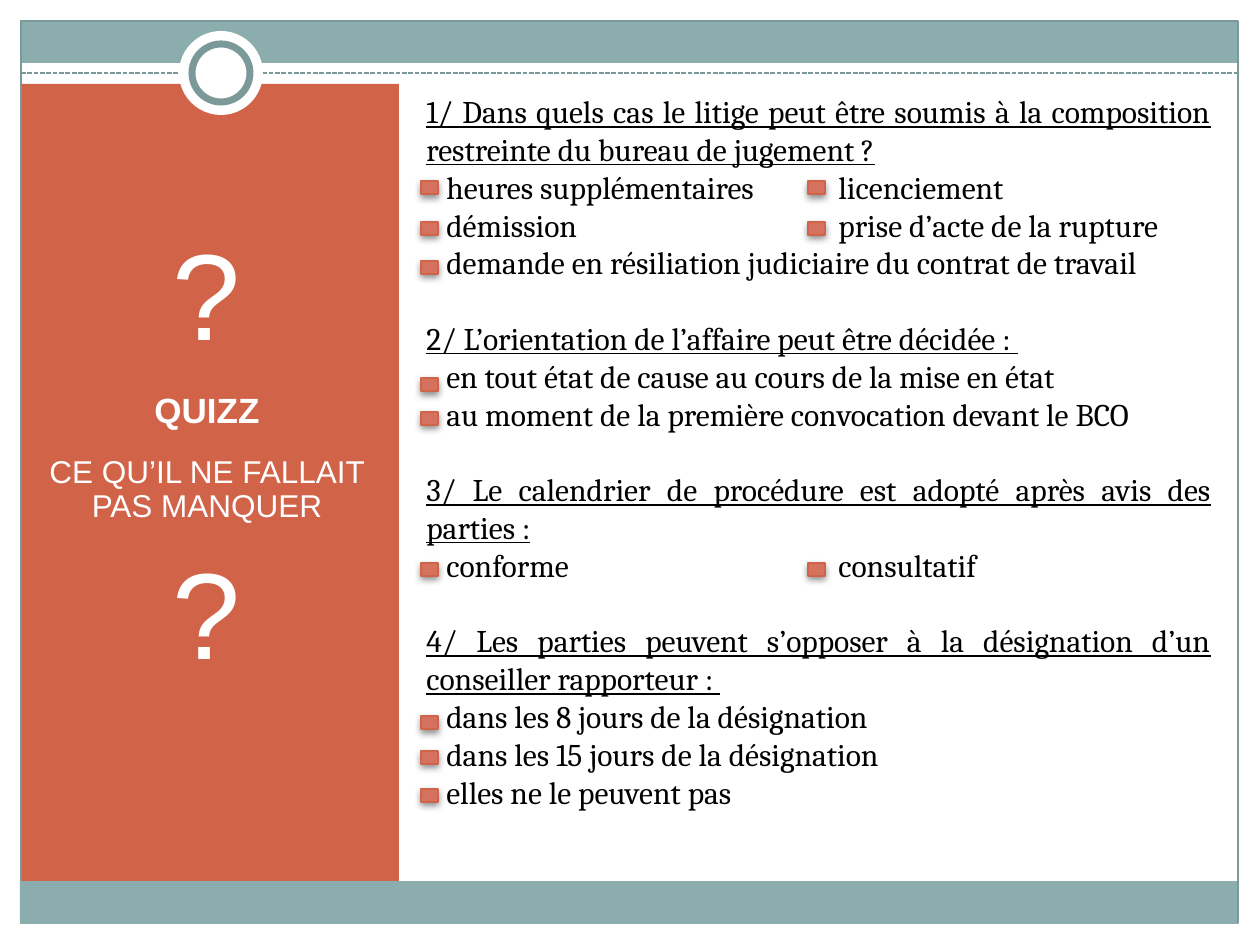
"""Build a quiz slide with a coloured side panel and four questions."""
from dataclasses import dataclass

from lxml import etree
from pptx import Presentation
from pptx import util as u
from pptx.dml.color import RGBColor
from pptx.enum import dml, shapes, text
from pptx.oxml import ns

SCALE = 914400 / 126
RECT = shapes.MSO_SHAPE.RECTANGLE
OVAL = shapes.MSO_SHAPE.OVAL
ALIGN = text.PP_ALIGN
FIT = text.MSO_AUTO_SIZE.SHAPE_TO_FIT_TEXT


@dataclass(frozen=True)
class Theme:
    white: str = "FFFFFF"
    black: str = "000000"
    teal: str = "8CADAE"
    edge: str = "7C999A"
    rust: str = "D16349"
    mark: str = "D4725F"
    sans: str = "Arial"
    serif: str = "Cambria"
    body: int = 18
    head: int = 20
    huge: int = 70
    row: float = 21.6


def px(num):
    return u.Emu(round(num * SCALE))


def rgb(code):
    return RGBColor.from_string(code)


def put(item, form):
    for key, val in form.items():
        setattr(item, key, val)


def node(root, tag, **attrs):
    return etree.SubElement(root, ns.qn(tag), {k: str(v) for k, v in attrs.items()})


class Page:
    def __init__(self, slide, theme):
        self.slide, self.theme = slide, theme

    def shape(self, kind, box, fill=None, line=None, width=0.75):
        item = self.slide.shapes.add_shape(kind, *map(px, box))
        item.shadow.inherit = False
        if fill:
            item.fill.solid()
            item.fill.fore_color.rgb = rgb(fill)
        else:
            item.fill.background()
        if line:
            item.line.color.rgb = rgb(line)
            item.line.width = u.Pt(width)
        else:
            item.line.fill.background()
        return item

    def rule(self, left, right, top):
        item = self.slide.shapes.add_connector(
            shapes.MSO_CONNECTOR.STRAIGHT, *map(px, (left, top, right, top)))
        item.line.color.rgb = rgb(self.theme.edge)
        put(item.line, {"width": u.Pt(0.9), "dash_style": dml.MSO_LINE.SQUARE_DOT})
        node(item._element.spPr, "a:effectLst")

    def mark(self, left, top):
        item = self.shape(RECT, (left, top, 17, 13), self.theme.mark, self.theme.rust)
        glow = node(item._element.spPr.find(ns.qn("a:effectLst")), "a:outerShdw",
                    blurRad=u.Pt(4), dist=u.Pt(2), dir=5400000, rotWithShape=0)
        node(node(glow, "a:srgbClr", val=self.theme.black), "a:alpha", val=45000)

    def frame(self, box, **form):
        item = self.slide.shapes.add_textbox(*map(px, box))
        put(item.text_frame, {"word_wrap": True, **form})
        return item.text_frame

    def para(self, frame, words, font, color, **form):
        first = frame.paragraphs[0]
        para = frame.add_paragraph() if first.runs else first
        put(para, form)
        run = para.add_run()
        run.text = words
        put(run.font, font)
        run.font.color.rgb = rgb(color)
        return para

    def option(self, frame, words, font, indent=0):
        para = self.para(frame, words, font, self.theme.black, alignment=ALIGN.LEFT)
        para._p.get_or_add_pPr().set("indent", str(px(indent)))


QUIZ = [
    ("1/ Dans quels cas le litige peut être soumis à la composition "
     "restreinte du bureau de jugement ?",
     [(181, "heures supplémentaires"),
      (222, "démission"),
      (261, "demande en résiliation judiciaire du contrat de travail")]),
    ("2/ L’orientation de l’affaire peut être décidée : ",
     [(378, "en tout état de cause au cours de la mise en état"),
      (412, "au moment de la première convocation devant le BCO")]),
    ("3/ Le calendrier de procédure est adopté après avis des parties :",
     [(563, "conforme")]),
    ("4/ Les parties peuvent s’opposer à la désignation d’un "
     "conseiller rapporteur : ",
     [(716, "dans les 8 jours de la désignation"),
      (751, "dans les 15 jours de la désignation"),
      (789, "elles ne le peuvent pas")]),
]

SIDE = [
    (162, [(181, "licenciement"), (222, "prise d’acte de la rupture")]),
    (540, [(563, "consultatif")]),
]


def decor(page):
    th = page.theme
    page.rule(21, 1239, 73)
    for box, fill, line, width in [
        ((1239, 0, 21, 945), th.white, None, 0),
        ((0, 0, 1260, 21), th.white, None, 0),
        ((0, 0, 21, 945), th.white, None, 0),
        ((21, 21, 1217, 42), th.teal, None, 0),
        ((21, 84, 378, 809), th.rust, None, 0),
        ((21, 21, 1217, 902), None, th.edge, 0.75),
    ]:
        page.shape(RECT, box, fill, line, width)
    page.shape(OVAL, (179, 31, 84, 84), th.white)
    page.shape(OVAL, (192, 44, 58, 58), th.white, th.edge, 4)
    page.shape(RECT, (20, 881, 1217, 43), th.teal)


def panel(page):
    th = page.theme
    frame = page.frame((26, 222, 362, 500), margin_top=px(13),
                       vertical_anchor=text.MSO_ANCHOR.TOP)
    for words, size, bold, lead in [
        ("?", th.huge, False, 0),
        ("QUIZZ", th.head, True, 5),
        ("CE QU’IL NE FALLAIT PAS MANQUER", th.body, False, 4),
        ("?", th.huge, False, 7),
    ]:
        font = {"name": th.sans, "size": u.Pt(size), "bold": bold}
        page.para(frame, words, font, th.white, alignment=ALIGN.CENTER,
                  line_spacing=0.9, space_before=u.Pt(lead), space_after=u.Pt(10))


def quiz(page):
    th = page.theme
    frame = page.frame((414, 86, 809, 738), auto_size=FIT)
    font = {"name": th.serif, "size": u.Pt(th.body)}
    for num, (ask, picks) in enumerate(QUIZ):
        page.para(frame, ask, {**font, "underline": True}, th.black,
                  alignment=ALIGN.JUSTIFY, space_before=u.Pt(th.row if num else 0))
        for top, words in picks:
            page.option(frame, words, font, 20)
            page.mark(421, top)
    for head, picks in SIDE:
        frame = page.frame((826, head, 397, 12 + 38 * len(picks)), auto_size=FIT)
        for top, words in picks:
            page.option(frame, words, font)
            page.mark(808, top)


def main():
    deck = Presentation()
    put(deck, {"slide_width": px(1260), "slide_height": px(945)})
    page = Page(deck.slides.add_slide(deck.slide_layouts[6]), Theme())
    for step in (decor, panel, quiz):
        step(page)
    deck.save("out.pptx")


if __name__ == "__main__":
    main()
